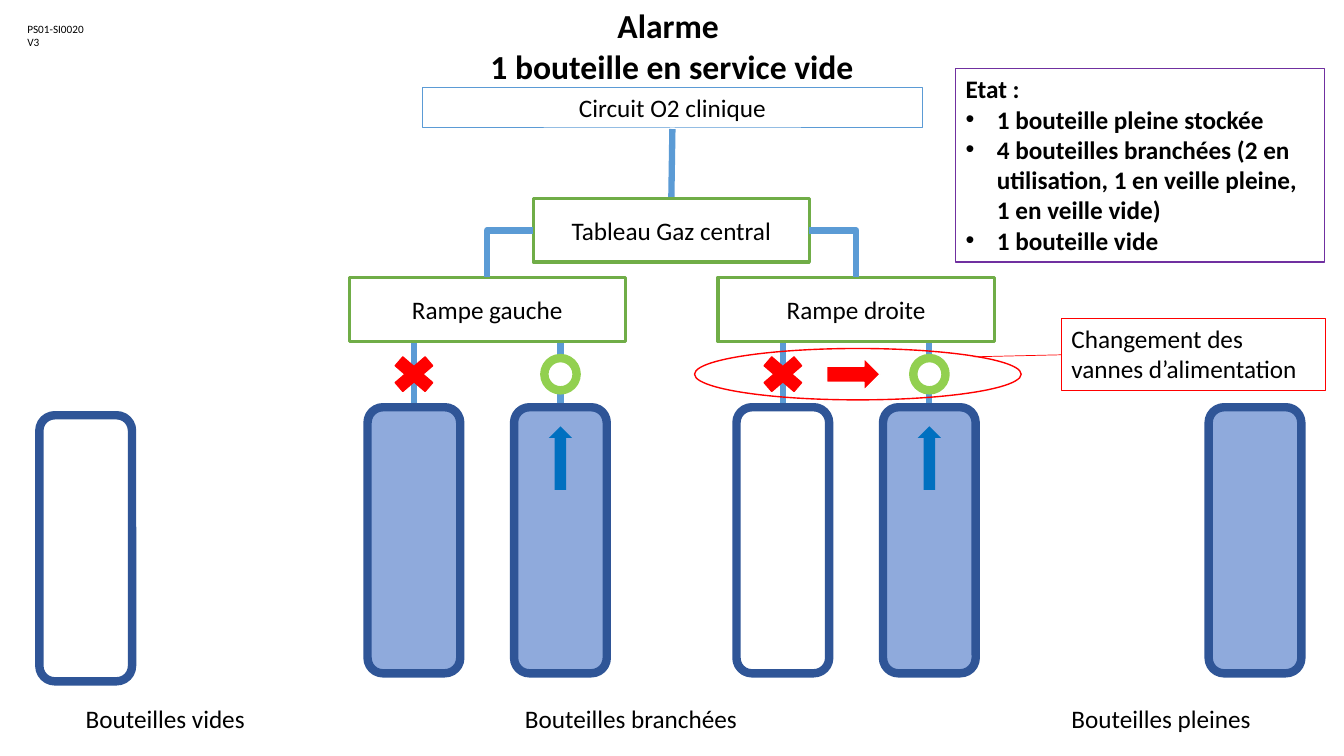
from lxml import etree
from pptx import Presentation
from pptx import util as u
from pptx.dml.color import RGBColor
from pptx.enum import shapes, text
from pptx.oxml.ns import qn

WIDTH, HEIGHT = u.Inches(13.33), u.Inches(7.5)
BLACK = RGBColor(0x00, 0x00, 0x00)
WHITE = RGBColor(0xFF, 0xFF, 0xFF)
PIPE = RGBColor(0x5B, 0x9B, 0xD5)
PANEL = RGBColor(0x70, 0xAD, 0x47)
GAS = RGBColor(0x8F, 0xAA, 0xDC)
STEEL = RGBColor(0x2F, 0x55, 0x97)
OPEN = RGBColor(0x92, 0xD0, 0x50)
FLOW = RGBColor(0x00, 0x70, 0xC0)
RED = RGBColor(0xFF, 0x00, 0x00)
PURPLE = RGBColor(0x70, 0x30, 0xA0)
KIND = shapes.MSO_SHAPE
ALIGN = text.PP_ALIGN
ANCHOR = text.MSO_ANCHOR

# Positions and sizes are percentages of the slide's width and height.
RAMPS = {"Rampe gauche": 36.25, "Rampe droite": 63.7}
RAMP_TOP, RAMP_BOTTOM = 36.67, 45.2
BOTTLE_OFFSET = 5.45
BOTTLE_TOP, BOTTLE_HEIGHT = 53.87, 35.2
TABLEAU_X, TABLEAU_Y, PANEL_WIDTH = 49.95, 30.47, 20.55
VALVE_Y = 49.5
LABELS = {"Bouteilles vides": 12.3, "Bouteilles branchées": 46.95,
          "Bouteilles pleines": 86.4}
STATE = ["Etat :", "1 bouteille pleine stockée",
         "4 bouteilles branchées (2 en utilisation, 1 en veille pleine, "
         "1 en veille vide)", "1 bouteille vide"]


def across(share):
    return round(WIDTH * share / 100)


def down(share):
    return round(HEIGHT * share / 100)


def frame(cx, cy, w, h):
    """Left, top, width and height of a box centred on (cx, cy)."""
    return across(cx - w / 2), down(cy - h / 2), across(w), down(h)


def place(shape, *box):
    for name, value in zip(("left", "top", "width", "height"), frame(*box)):
        setattr(shape, name, value)


def outline(shape, color, points):
    if color is None:
        shape.line.fill.background()
    else:
        shape.line.color.rgb = color
        shape.line.width = u.Pt(points)


def write(shape, lines, size=18, bold=False, align=ALIGN.CENTER,
          anchor=ANCHOR.TOP):
    body = shape.text_frame
    settings = {"word_wrap": True, "auto_size": text.MSO_AUTO_SIZE.NONE,
                "vertical_anchor": anchor,
                "margin_left": u.Inches(0.1), "margin_right": u.Inches(0.1),
                "margin_top": u.Inches(0.05), "margin_bottom": u.Inches(0.05)}
    for name, value in settings.items():
        setattr(body, name, value)
    body.text = "\n".join(lines)
    for paragraph in body.paragraphs:
        paragraph.alignment = align
        paragraph.space_before = u.Pt(0)
        font = paragraph.runs[0].font
        look = {"name": "Calibri", "size": u.Pt(size), "bold": bold}
        for name, value in look.items():
            setattr(font, name, value)
        font.color.rgb = BLACK


def set_bullet(paragraph, bullet):
    indent = u.Inches(0.31) if bullet else 0
    props = paragraph._p.get_or_add_pPr()
    props.set("marL", str(indent))
    props.set("indent", str(-indent))
    if bullet:
        etree.SubElement(props, qn("a:buFont"), typeface="Arial")
        etree.SubElement(props, qn("a:buChar"), char="•")
    else:
        etree.SubElement(props, qn("a:buNone"))


def add_block(slide, kind, box, fill=None, line=None, points=1):
    block = slide.shapes.add_shape(kind, *frame(*box))
    block.shadow.inherit = False
    if fill is None:
        block.fill.background()
    else:
        block.fill.solid()
        block.fill.fore_color.rgb = fill
    outline(block, line, points)
    return block


def add_label(slide, lines, box, **look):
    write(slide.shapes.add_textbox(*frame(*box)), lines, **look)


def add_line(slide, x1, y1, x2, y2, color=PIPE, points=4.5, bent=False):
    kind = shapes.MSO_CONNECTOR.ELBOW if bent else shapes.MSO_CONNECTOR.STRAIGHT
    line = slide.shapes.add_connector(
        kind, across(x1), down(y1), across(x2), down(y2))
    outline(line, color, points)
    props = line._element.spPr
    etree.SubElement(props, qn("a:effectLst"))
    if bent:
        props.find(qn("a:prstGeom")).set("prst", "bentConnector2")


def add_panel(slide, caption, cx, cy, h):
    panel = add_block(slide, KIND.RECTANGLE, (cx, cy, PANEL_WIDTH, h),
                      WHITE, PANEL, 2.25)
    write(panel, [caption], anchor=ANCHOR.MIDDLE)


def add_bottle(slide, cx, full=True, top=BOTTLE_TOP):
    add_block(slide, KIND.ROUNDED_RECTANGLE,
              (cx, top + BOTTLE_HEIGHT / 2, 6.9, BOTTLE_HEIGHT),
              GAS if full else None, STEEL, 6)


def add_branch(slide, cx, full, in_use):
    """A bottle with its pipe and an open or closed valve."""
    add_line(slide, cx, BOTTLE_TOP, cx, RAMP_BOTTOM)
    add_bottle(slide, cx, full)
    if in_use:
        add_block(slide, KIND.OVAL, (cx, VALVE_Y, 2.4, 4.27), WHITE, OPEN, 6)
        add_block(slide, KIND.UP_ARROW, (cx, 60.6, 1.73, 8.4), FLOW)
    else:
        add_block(slide, KIND.MATH_MULTIPLY, (cx, VALVE_Y, 4.28, 6.53), RED, RED)


def add_ramp(slide, caption, cx, standby_full):
    add_branch(slide, cx - BOTTLE_OFFSET, standby_full, in_use=False)
    add_branch(slide, cx + BOTTLE_OFFSET, full=True, in_use=True)
    add_panel(slide, caption, cx, (RAMP_TOP + RAMP_BOTTOM) / 2,
              RAMP_BOTTOM - RAMP_TOP)
    side = 1 if cx > TABLEAU_X else -1
    add_line(slide, TABLEAU_X + side * PANEL_WIDTH / 2, TABLEAU_Y,
             cx, RAMP_TOP, bent=True)


def add_valve_change(slide):
    add_block(slide, KIND.OVAL, (63.83, VALVE_Y, 24.3, 6.8), line=RED)
    add_block(slide, KIND.RIGHT_ARROW, (63.5, VALVE_Y, 3.98, 4.27), RED, WHITE)
    add_line(slide, 79, 46.93, 72.45, 47.2, RED, 0.5)
    note = add_block(slide, KIND.RECTANGLE, (88.8, 46.87, 19.65, 9.47),
                     line=RED, points=0.75)
    write(note, ["Changement des vannes d’alimentation"], align=ALIGN.LEFT)


def add_state(body):
    place(body, 84.83, 21.87, 27.45, 25.6)
    outline(body, PURPLE, 1)
    write(body, STATE, bold=True, align=ALIGN.LEFT)
    for index, paragraph in enumerate(body.text_frame.paragraphs):
        set_bullet(paragraph, bullet=index > 0)


def main():
    deck = Presentation()
    deck.slide_width, deck.slide_height = WIDTH, HEIGHT
    slide = deck.slides.add_slide(deck.slide_layouts[1])

    title = slide.shapes.title
    place(title, 50, 6.07, 92.6, 12.13)
    write(title, ["Alarme ", "1 bouteille en service vide"], size=24, bold=True)
    add_state(slide.placeholders[1])
    add_label(slide, ["PS01-SI0020", "V3"], (12.19, 4.73, 21.8, 4.93),
              size=8, align=ALIGN.LEFT)

    circuit = add_block(slide, KIND.RECTANGLE, (50.03, 14.27, 37.2, 5.33),
                        line=PIPE, points=0.75)
    write(circuit, ["Circuit O2 clinique"])
    add_line(slide, TABLEAU_X, 26.27, 50.03, 17.07)
    add_panel(slide, "Tableau Gaz central", TABLEAU_X, TABLEAU_Y, 8.4)
    for caption, cx in RAMPS.items():
        add_ramp(slide, caption, cx, standby_full=caption == "Rampe gauche")

    add_bottle(slide, 6.38, full=False, top=54.93)
    add_bottle(slide, 93.38)
    for caption, cx in LABELS.items():
        add_label(slide, [caption], (cx, 95.07, 30.9, 5.33))
    add_valve_change(slide)
    deck.save("out.pptx")


if __name__ == "__main__":
    main()
